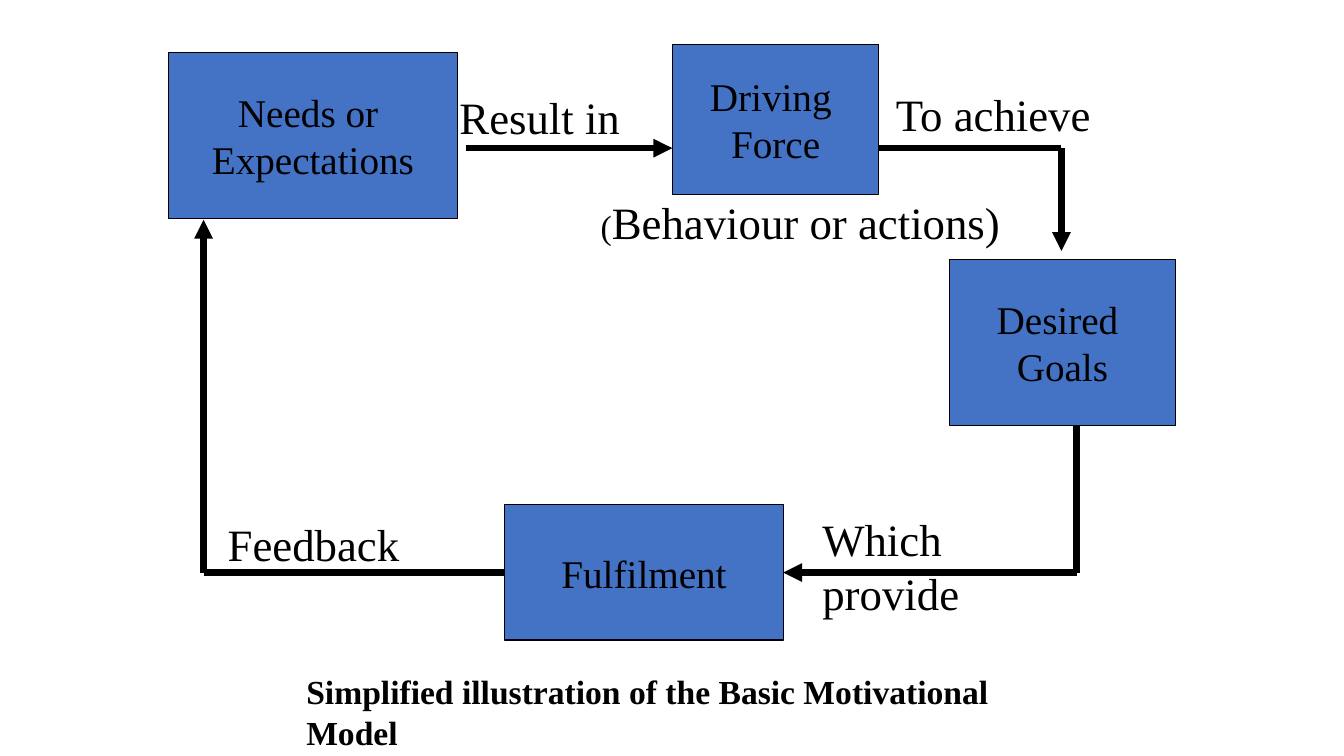
import pptx
import pptx.dml.color
import pptx.enum.shapes
import pptx.enum.text
import pptx.oxml.ns
import pptx.util
import lxml.etree

PX = 9144  # one px is a hundredth of an inch


def colour(value):
    return pptx.dml.color.RGBColor.from_string(value)


class Diagram:
    """Holds the style and the current page."""

    font = "Times New Roman"
    ink = "000000"
    box_fill = "4472C4"

    def __init__(self, page):
        self.page = page

    def add_span(self, para, text, size, bold=False):
        span = para.add_run()
        span.text = text
        span.font.name = self.font
        span.font.size = pptx.util.Pt(size)
        span.font.bold = bold
        span.font.color.rgb = colour(self.ink)

    def box(self, area, lines):
        box = self.page.shapes.add_shape(
            pptx.enum.shapes.MSO_SHAPE.RECTANGLE, *(PX * n for n in area))
        box.shadow.inherit = False
        box.fill.solid()
        box.fill.fore_color.rgb = colour(self.box_fill)
        box.line.color.rgb = colour(self.ink)
        box.line.width = pptx.util.Pt(0.75)
        frame = box.text_frame
        frame.word_wrap = False
        frame.vertical_anchor = pptx.enum.text.MSO_ANCHOR.MIDDLE
        for index, line in enumerate(lines):
            para = frame.add_paragraph() if index else frame.paragraphs[0]
            para.alignment = pptx.enum.text.PP_ALIGN.CENTER
            self.add_span(para, line, 28)
        return box

    def label(self, area, spans, wrap=False, bold=False):
        label = self.page.shapes.add_textbox(*(PX * n for n in area))
        frame = label.text_frame
        frame.word_wrap = wrap
        frame.auto_size = pptx.enum.text.MSO_AUTO_SIZE.SHAPE_TO_FIT_TEXT
        for text, size in spans:
            self.add_span(frame.paragraphs[0], text, size, bold)

    def line(self, start, end, arrow=False):
        line = self.page.shapes.add_connector(
            pptx.enum.shapes.MSO_CONNECTOR.STRAIGHT,
            *(PX * n for n in start + end))
        line.line.color.rgb = colour(self.ink)
        line.line.width = pptx.util.Pt(4.5)
        if arrow:
            outline = line._element.spPr.find(pptx.oxml.ns.qn("a:ln"))
            lxml.etree.SubElement(
                outline, pptx.oxml.ns.qn("a:tailEnd"), type="triangle")
        lxml.etree.SubElement(
            line._element.spPr, pptx.oxml.ns.qn("a:effectLst"))
        return line


def main():
    deck = pptx.Presentation()
    deck.slide_width = pptx.util.Emu(12192000)
    deck.slide_height = pptx.util.Emu(750 * PX)
    diagram = Diagram(deck.slides.add_slide(deck.slide_layouts[6]))

    # Stages of the model
    diagram.box((167, 52, 287, 165), ["Needs or ", "Expectations"])
    diagram.box((667, 44, 205, 149), ["Driving ", "Force"])
    diagram.box((942, 257, 224, 165), ["Desired ", "Goals"])
    fulfilment = diagram.box((501, 501, 276, 134), ["Fulfilment"])

    # Arrows around the cycle
    top, bottom = 147, 568
    goals_x, provide_x, feedback_x = 1053, 1068, 202
    diagram.line((871, top), (goals_x, top))
    diagram.line((goals_x, top), (goals_x, 249), arrow=True)
    diagram.line((462, top), (667, top), arrow=True)
    diagram.line((provide_x, 422), (provide_x, bottom))
    provide = diagram.line((provide_x, bottom), (777, bottom), arrow=True)
    provide.end_connect(fulfilment, 3)
    feedback = diagram.line((501, bottom), (feedback_x, bottom))
    feedback.begin_connect(fulfilment, 1)
    diagram.line((feedback_x, bottom), (feedback_x, 218), arrow=True)

    # Caption and arrow labels
    diagram.label(
        (294, 661, 795, 50),
        [("Simplified illustration of the Basic Motivational Model", 24)],
        wrap=True, bold=True)
    diagram.label((586, 188, 435, 63),
                  [("(", 24), ("Behaviour or actions)", 32)], wrap=True)
    diagram.label((446, 84, 180, 63), [("Result in", 32)])
    diagram.label((879, 81, 216, 63), [("To achieve", 32)])
    diagram.label((806, 503, 238, 117), [("Which provide", 32)], wrap=True)
    diagram.label((216, 508, 191, 63), [("Feedback", 32)])

    deck.save("out.pptx")


if __name__ == "__main__":
    main()
